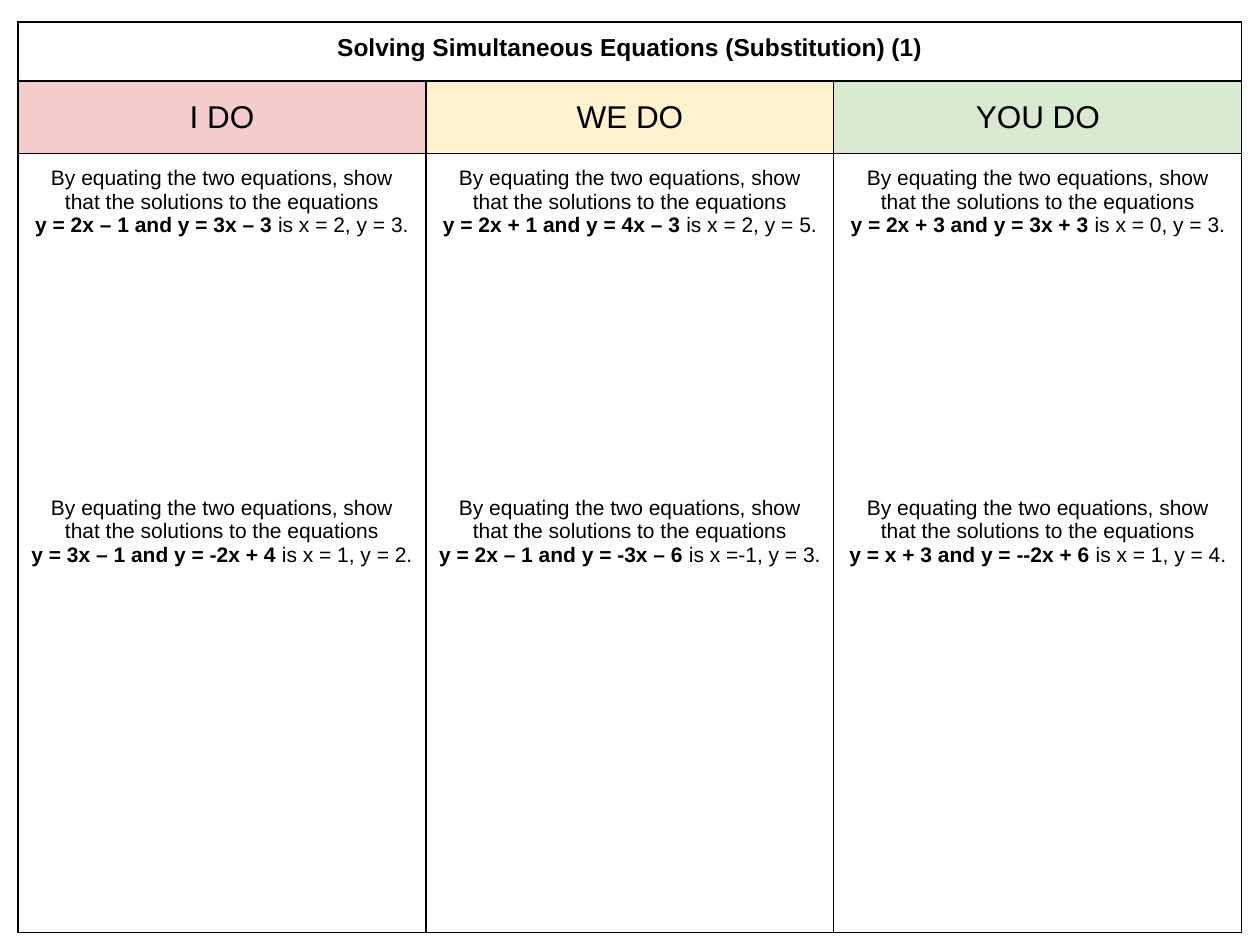
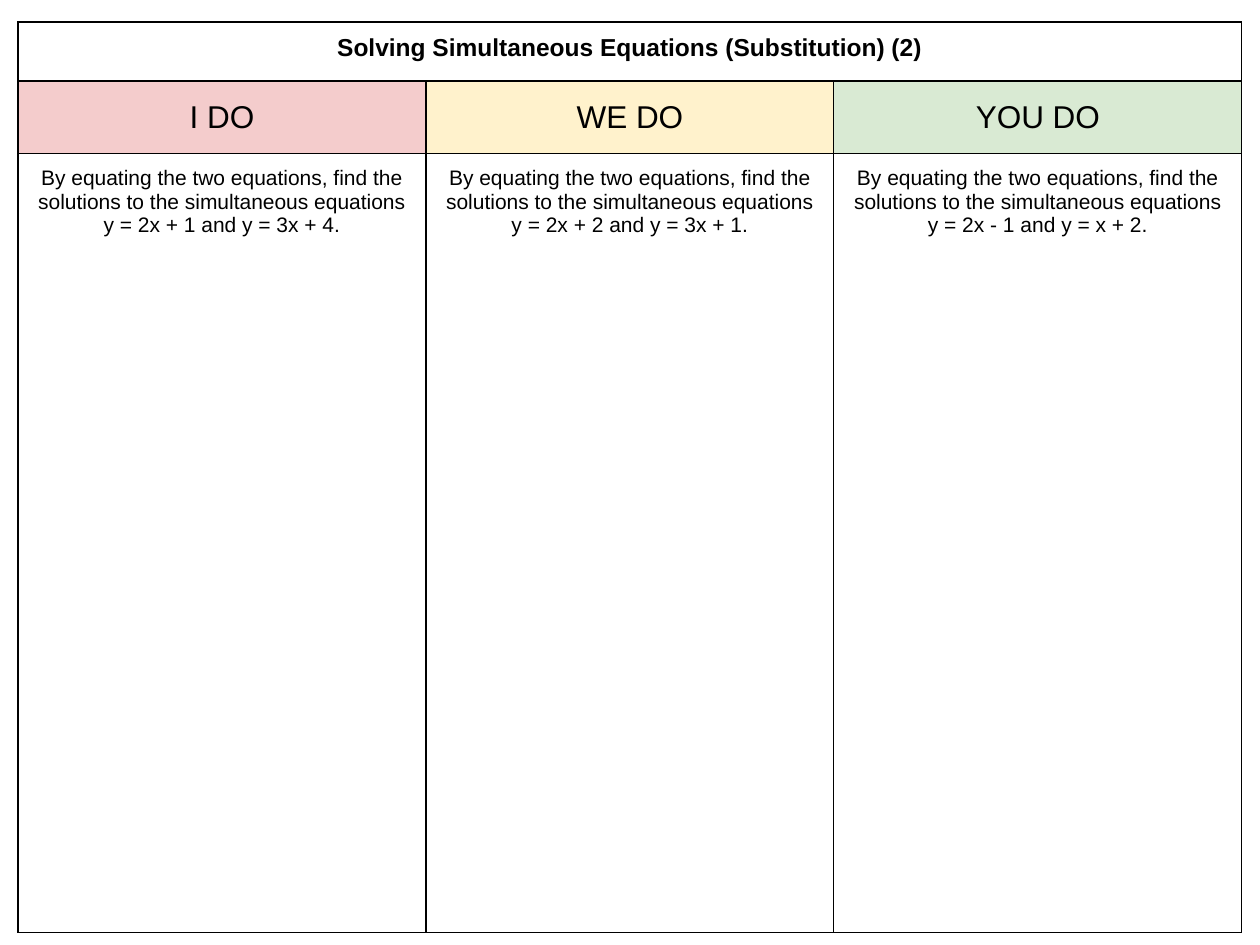
from lxml import etree
from pptx import Presentation
from pptx.dml.color import RGBColor
from pptx.enum.text import MSO_ANCHOR as Anchor, PP_ALIGN as Align
from pptx.oxml import parse_xml
from pptx.oxml.ns import nsdecls
from pptx.util import Emu, Pt

PX = 7257  # EMU in one px, at 126 px to the inch
BLACK = RGBColor(0x00, 0x00, 0x00)
WHITE = RGBColor(0xFF, 0xFF, 0xFF)
PINK = RGBColor(0xF4, 0xCC, 0xCC)
CREAM = RGBColor(0xFF, 0xF2, 0xCC)
GREEN = RGBColor(0xD9, 0xEA, 0xD3)

FONT = "Arial"
LEFT, TOP = 18, 22
COLUMN_WIDTH = 408
ROW_HEIGHTS = [59, 73, 779]
CELL_MARGIN = Emu(91440)
WORKING_SPACE = Pt(148)
STAGES = [("I DO", PINK), ("WE DO", CREAM), ("YOU DO", GREEN)]

SHOW = "By equating the two equations, show that the solutions to the equations"
FIND = "By equating the two equations, find the solutions to the simultaneous equations"

# Each lesson: title, instruction, then per stage its (bold, plain) questions.
LESSONS = [
    ("Solving Simultaneous Equations (Substitution) (1)", SHOW, [
        [("y = 2x – 1 and y = 3x – 3 ", "is x = 2, y = 3."),
         ("y = 3x – 1 and y = -2x + 4 ", "is x = 1, y = 2.")],
        [("y = 2x + 1 and y = 4x – 3 ", "is x = 2, y = 5."),
         ("y = 2x – 1 and y = -3x – 6 ", "is x =-1, y = 3.")],
        [("y = 2x + 3 and y = 3x + 3 ", "is x = 0, y = 3."),
         ("y = x + 3 and y = --2x + 6 ", "is x = 1, y = 4.")],
    ]),
    ("Solving Simultaneous Equations (Substitution) (2)", FIND, [
        [("", "y = 2x + 1 and y = 3x + 4.")],
        [("", "y = 2x + 2 and y = 3x + 1.")],
        [("", "y = 2x - 1 and y = x + 2.")],
    ]),
]


def style_cell(cell, fill, anchor):
    """Set margins, anchor, fill and a thin black border on every side."""
    cell.margin_left = cell.margin_right = CELL_MARGIN
    cell.margin_top = cell.margin_bottom = CELL_MARGIN
    cell.vertical_anchor = anchor
    cell.fill.solid()
    cell.fill.fore_color.rgb = fill
    properties = cell._tc.get_or_add_tcPr()
    for index, side in enumerate(["lnL", "lnR", "lnT", "lnB"]):
        properties.insert(index, parse_xml(
            f'<a:{side} {nsdecls("a")} w="{Pt(0.75)}"><a:solidFill>'
            f'<a:srgbClr val="{BLACK}"/></a:solidFill></a:{side}>'))


def write_line(paragraph, parts, size):
    """Fill a centred paragraph with (text, bold) parts."""
    paragraph.alignment = Align.CENTER
    paragraph.font.name = FONT
    paragraph.font.size = Pt(size)
    paragraph.font.color.rgb = BLACK
    for text, bold in parts:
        if text:
            run = paragraph.add_run()
            run.text = text
            run.font.name = FONT
            run.font.size = Pt(size)
            run.font.color.rgb = BLACK
            run.font.bold = bold


prs = Presentation()
prs.slide_width, prs.slide_height = Emu(9144000), Emu(6858000)

for title, instruction, stage_questions in LESSONS:
    slide = prs.slides.add_slide(prs.slide_layouts[6])
    worksheet = slide.shapes.add_table(
        len(ROW_HEIGHTS), len(STAGES), LEFT * PX, TOP * PX,
        len(STAGES) * COLUMN_WIDTH * PX, sum(ROW_HEIGHTS) * PX).table
    worksheet.first_row = worksheet.horz_banding = False
    for column in worksheet.columns:
        column.width = Emu(COLUMN_WIDTH * PX)
    for row, height in zip(worksheet.rows, ROW_HEIGHTS):
        row.height = Emu(height * PX)

    heading = worksheet.cell(0, 0)
    heading.merge(worksheet.cell(0, len(STAGES) - 1))
    write_line(heading.text_frame.paragraphs[0], [(title, True)], 14)

    for col, ((stage, tint), questions) in enumerate(zip(STAGES, stage_questions)):
        stage_cell, work_cell = worksheet.cell(1, col), worksheet.cell(2, col)
        style_cell(worksheet.cell(0, col), WHITE, Anchor.TOP)
        style_cell(stage_cell, tint, Anchor.MIDDLE)
        style_cell(work_cell, WHITE, Anchor.TOP)
        write_line(stage_cell.text_frame.paragraphs[0], [(stage, False)], 18)

        work = work_cell.text_frame
        for number, (equations, ending) in enumerate(questions):
            prompt = work.add_paragraph() if number else work.paragraphs[0]
            if number:
                prompt.space_before = WORKING_SPACE
            write_line(prompt, [(instruction, False)], 12)
            write_line(work.add_paragraph(), [(equations, True), (ending, False)], 12)

prs.save("out.pptx")
